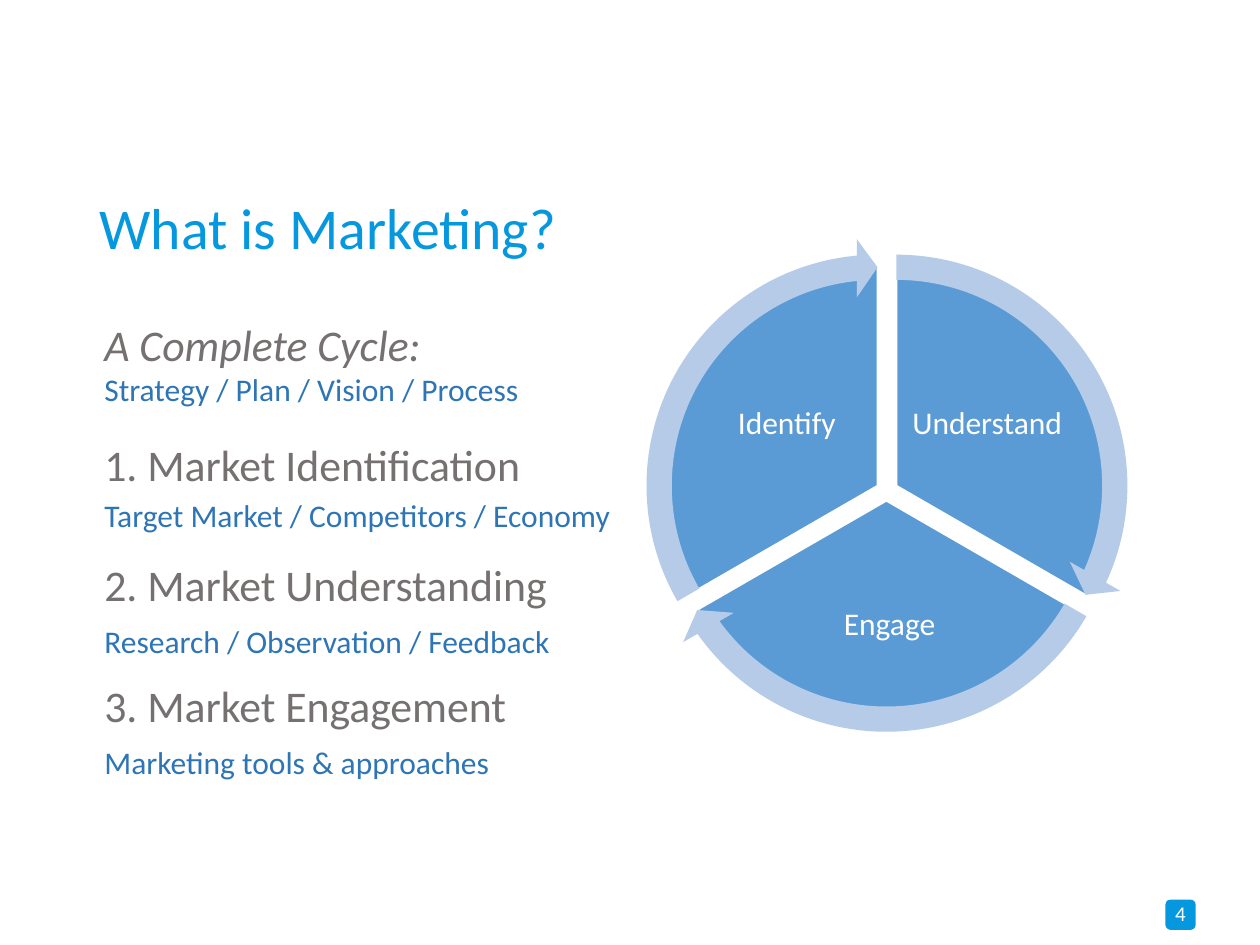
from pptx import Presentation
from pptx.dml.color import RGBColor
from pptx.enum.shapes import MSO_SHAPE as Shape
from pptx.enum.text import MSO_ANCHOR as Anchor, PP_ALIGN as Align
from pptx.util import Inches, Pt

FONT = "Calibri"
WHITE = RGBColor(0xFF, 0xFF, 0xFF)
CYAN = RGBColor(0x06, 0x98, 0xDF)
GRAY = RGBColor(0x76, 0x71, 0x71)
DARK_BLUE = RGBColor(0x2E, 0x75, 0xB6)
PIE_BLUE = RGBColor(0x5B, 0x9B, 0xD5)
PALE_BLUE = RGBColor(0xB5, 0xCB, 0xE7)

TOPICS = [
    ("A Complete Cycle:", "Strategy / Plan / Vision / Process", 0.37),
    ("1. Market Identification", "Target Market / Competitors / Economy", 1.37),
    ("2. Market Understanding", "Research / Observation / Feedback", 2.37),
    ("3. Market Engagement", "Marketing tools & approaches", 3.33),
]
SEGMENTS = [
    ("Understand", (162, 18), (14.72, 161.99), (0.15, 0), (2.21, 0.96, 1.25, 1.04)),
    ("Engage", (18, 90), (86.72, 18), (0.07, 0.12), (1.12, 2.61, 1.88, 0.92)),
    ("Identify", (90, 162), (158.73, 90), (0, 0), (0.62, 0.96, 1.25, 1.04)),
]


def add_run(para, text, size, color, italic=False):
    """Append one styled run to a paragraph."""
    span = para.add_run()
    span.text = text
    font = span.font
    font.name, font.size, font.italic = FONT, Pt(size), italic
    font.color.rgb = color


def add_text_box(shapes, left, top, width, height):
    """Add a wrapping text box and return its text frame."""
    box = shapes.add_textbox(Inches(left), Inches(top), Inches(width), Inches(height))
    box.text_frame.word_wrap = True
    return box.text_frame


def add_filled(shapes, kind, left, top, size, color, adjustments=()):
    """Add a square-bounded preset shape with a flat fill and no outline."""
    shape = shapes.add_shape(kind, Inches(left), Inches(top), Inches(size), Inches(size))
    shape.shadow.inherit = False
    shape.fill.solid()
    shape.fill.fore_color.rgb = color
    shape.line.fill.background()
    for index, value in enumerate(adjustments):
        shape.adjustments[index] = value
    return shape


def center_text(frame, margin, text, size):
    """Write one white line in the middle of a text frame."""
    frame.margin_left = frame.margin_right = Inches(margin)
    frame.margin_top = frame.margin_bottom = Inches(margin)
    frame.vertical_anchor = Anchor.MIDDLE
    para = frame.paragraphs[0]
    para.alignment = Align.CENTER
    para.line_spacing = 0.9
    add_run(para, text, size, WHITE)


def add_title(page, left, top, width, height):
    """Place and format the title placeholder."""
    title = page.shapes.title
    title.left, title.top = Inches(left), Inches(top)
    title.width, title.height = Inches(width), Inches(height)
    title.text_frame.vertical_anchor = Anchor.MIDDLE
    para = title.text_frame.paragraphs[0]
    para.alignment = Align.LEFT
    para.line_spacing = 0.9
    add_run(para, "What is Marketing?", 33, CYAN)


def add_topics(page, left, top, width, height):
    """Add the topic headings and the detail line under each one."""
    frame = add_text_box(page.shapes, left, top, width, height)
    for index, (heading, detail, offset) in enumerate(TOPICS):
        para = frame.add_paragraph() if index else frame.paragraphs[0]
        para.line_spacing = 0.9
        para.space_before = Pt(41.7 if index else 0)
        add_run(para, heading, 25, GRAY, italic=index == 0)
        detail_frame = add_text_box(page.shapes, left, top + offset, 4.35, 0.4)
        add_run(detail_frame.paragraphs[0], detail, 18, DARK_BLUE)


def add_cycle(page, left, top, pie_size=3.5, arrow_size=3.93):
    """Add the three-part cycle with an arrow around each part."""
    shapes = page.shapes.add_group_shape().shapes
    inset = (arrow_size - pie_size) / 2
    for name, angles, _, (dx, dy), (x, y, width, height) in SEGMENTS:
        pie = add_filled(shapes, Shape.PIE, left + dx + inset, top + dy + inset,
                         pie_size, PIE_BLUE, angles)
        pie.line.color.rgb = WHITE
        pie.line.width = Pt(1)
        label = add_text_box(shapes, left + x, top + y, width, height)
        center_text(label, 0.03, name, 18)
    for _, _, (end, start), (dx, dy), _ in SEGMENTS:
        add_filled(shapes, Shape.CIRCULAR_ARROW, left + dx, top + dy, arrow_size,
                   PALE_BLUE, (0.051, 3.275, end, start, 0.059))


def add_page_number(page, left, top, size):
    """Add the page number badge."""
    badge = add_filled(page.shapes, Shape.ROUNDED_RECTANGLE, left, top, size, CYAN)
    center_text(badge.text_frame, 0, "4", 12)


def main():
    """Build and save the deck."""
    deck = Presentation()
    deck.slide_width, deck.slide_height = Inches(10), Inches(7.5)
    page = deck.slides.add_slide(deck.slide_layouts[5])
    add_page_number(page, 9.25, 7.14, 0.24)
    add_title(page, 0.69, 1.23, 8.64, 1.2)
    add_topics(page, 0.73, 2.52, 7, 4.57)
    add_cycle(page, 5, 1.89)
    deck.save("out.pptx")


if __name__ == "__main__":
    main()
